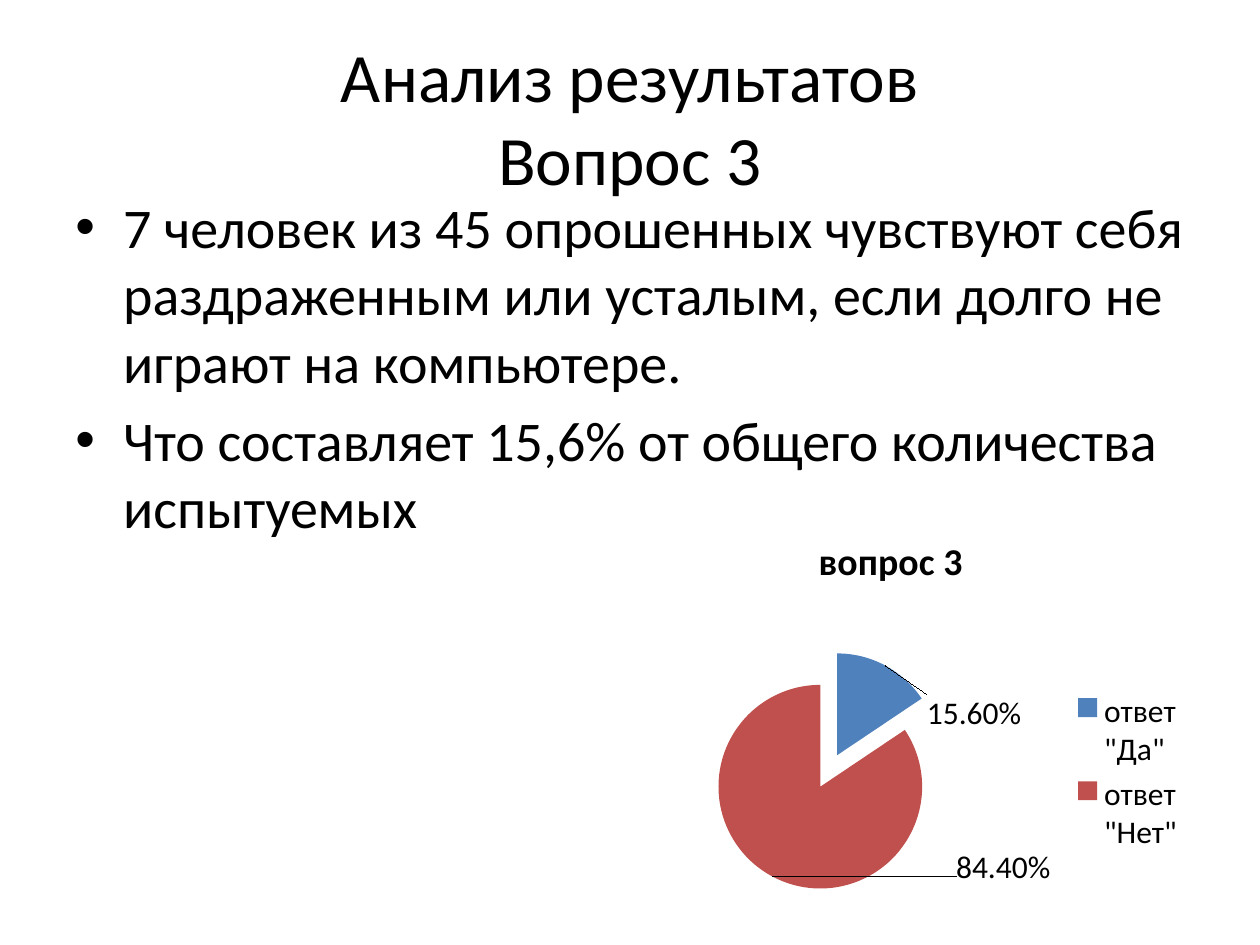
from lxml.etree import SubElement
from pptx import Presentation
from pptx.chart.data import CategoryChartData
from pptx.dml.color import RGBColor
from pptx.enum.chart import XL_CHART_TYPE, XL_LABEL_POSITION, XL_LEGEND_POSITION
from pptx.enum.text import MSO_ANCHOR, PP_ALIGN
from pptx.oxml import parse_xml
from pptx.oxml.ns import nsdecls, qn
from pptx.util import Inches, Pt

COLORS = {"text": "000000", "yes": "4F81BD", "no": "C0504D"}


def manual_layout(**settings):
    layout = parse_xml(f"<c:layout {nsdecls('c')}><c:manualLayout/></c:layout>")
    for tag, value in settings.items():
        SubElement(layout[0], qn(f"c:{tag}")).set("val", str(value))
    return layout


def replace_layout(parent, position, layout):
    for old in parent.findall(qn("c:layout")):
        parent.remove(old)
    parent.insert(position, layout)


class SurveySlide:
    font_name = "Calibri"

    def __init__(self, presentation):
        self.width = presentation.slide_width
        self.height = presentation.slide_height
        self.slide = presentation.slides.add_slide(presentation.slide_layouts[6])

    def area(self, *percents):
        sides = (self.width, self.height) * 2
        return [round(percent * side / 100) for percent, side in zip(percents, sides)]

    def style(self, font, size, bold=False):
        font.name = self.font_name
        font.size = Pt(size)
        font.bold = bold
        font.color.rgb = RGBColor.from_string(COLORS["text"])

    def frame(self, percents, anchor):
        frame = self.slide.shapes.add_textbox(*self.area(*percents)).text_frame
        frame.word_wrap = True
        frame.vertical_anchor = anchor
        return frame

    def title(self, text, percents):
        heading = self.frame(percents, MSO_ANCHOR.MIDDLE).paragraphs[0]
        heading.text = text
        heading.alignment = PP_ALIGN.CENTER
        self.style(heading.font, 39.6)

    def bullets(self, findings, percents):
        frame = self.frame(percents, MSO_ANCHOR.TOP)
        for index, finding in enumerate(findings):
            item = frame.add_paragraph() if index else frame.paragraphs[0]
            item.text = finding
            item.space_before = Pt(6.4)
            self.style(item.font, 32)
            properties = item._p.get_or_add_pPr()
            properties.set("marL", str(Inches(0.38)))
            properties.set("indent", str(Inches(-0.38)))
            spacing = properties.find(qn("a:spcBef"))
            for mark in ('buChar {} char="•"', 'buFont {} typeface="Arial"'):
                spacing.addnext(parse_xml(f"<a:{mark.format(nsdecls('a'))}/>"))

    def pie(self, name, answers, percents):
        data = CategoryChartData(number_format="0.00%")
        data.categories = [answer for answer, *_ in answers]
        data.add_series(name, [share for _, share, *_ in answers])
        chart = self.slide.shapes.add_chart(
            XL_CHART_TYPE.PIE, *self.area(*percents), data).chart
        self.style(chart.font, 18)

        chart.has_title = True
        heading = chart.chart_title.text_frame.paragraphs[0]
        heading.text = name
        self.style(heading.font, 21.6, bold=True)

        chart.has_legend = True
        chart.legend.position = XL_LEGEND_POSITION.RIGHT
        chart.legend.include_in_layout = False
        self.style(chart.legend.font, 18)
        replace_layout(chart.legend._element, 1, manual_layout(
            xMode="edge", yMode="edge", x=0.77, y=0.4, w=0.2, h=0.4))
        replace_layout(chart._chartSpace.chart.plotArea, 0, manual_layout(
            layoutTarget="inner", xMode="edge", yMode="edge",
            x=0.23, y=0.4, w=0.32, h=0.47))

        chart.plots[0].vary_by_categories = True
        series = chart.plots[0].series[0]
        labels = series.data_labels
        labels.show_value = True
        labels.number_format = "0.00%"
        labels.number_format_is_linked = False
        self.style(labels.font, 18)
        for index, (_, _, color, explosion, shift) in enumerate(answers):
            point = series.points[index]
            point.format.fill.solid()
            point.format.fill.fore_color.rgb = RGBColor.from_string(COLORS[color])
            if explosion:
                slice_format = series._element.findall(qn("c:dPt"))[index].find(qn("c:spPr"))
                slice_format.addprevious(parse_xml(
                    f'<c:explosion {nsdecls("c")} val="{explosion}"/>'))
            point.data_label.position = XL_LABEL_POSITION.OUTSIDE_END
            label = labels._element.findall(qn("c:dLbl"))[index]
            replace_layout(label, 1, manual_layout(x=shift[0], y=shift[1]))


def main():
    presentation = Presentation()
    presentation.slide_width, presentation.slide_height = Inches(10), Inches(7.5)
    survey = SurveySlide(presentation)
    survey.title("Анализ результатов\vВопрос 3", (5, 4, 90, 16.67))
    survey.bullets([
        "7 человек из 45 опрошенных чувствуют себя раздраженным или усталым, "
        "если долго не играют на компьютере.",
        "Что составляет 15,6% от общего количества испытуемых",
    ], (5, 19.73, 91, 69.6))
    survey.pie("вопрос 3", [
        ('ответ "Да"', 0.156, "yes", 35, (0.06, 0.17)),
        ('ответ "Нет"', 0.844, "no", 0, (0.44, -0.08)),
    ], (45.3, 54.13, 50.8, 45.87))
    presentation.save("out.pptx")


if __name__ == "__main__":
    main()
